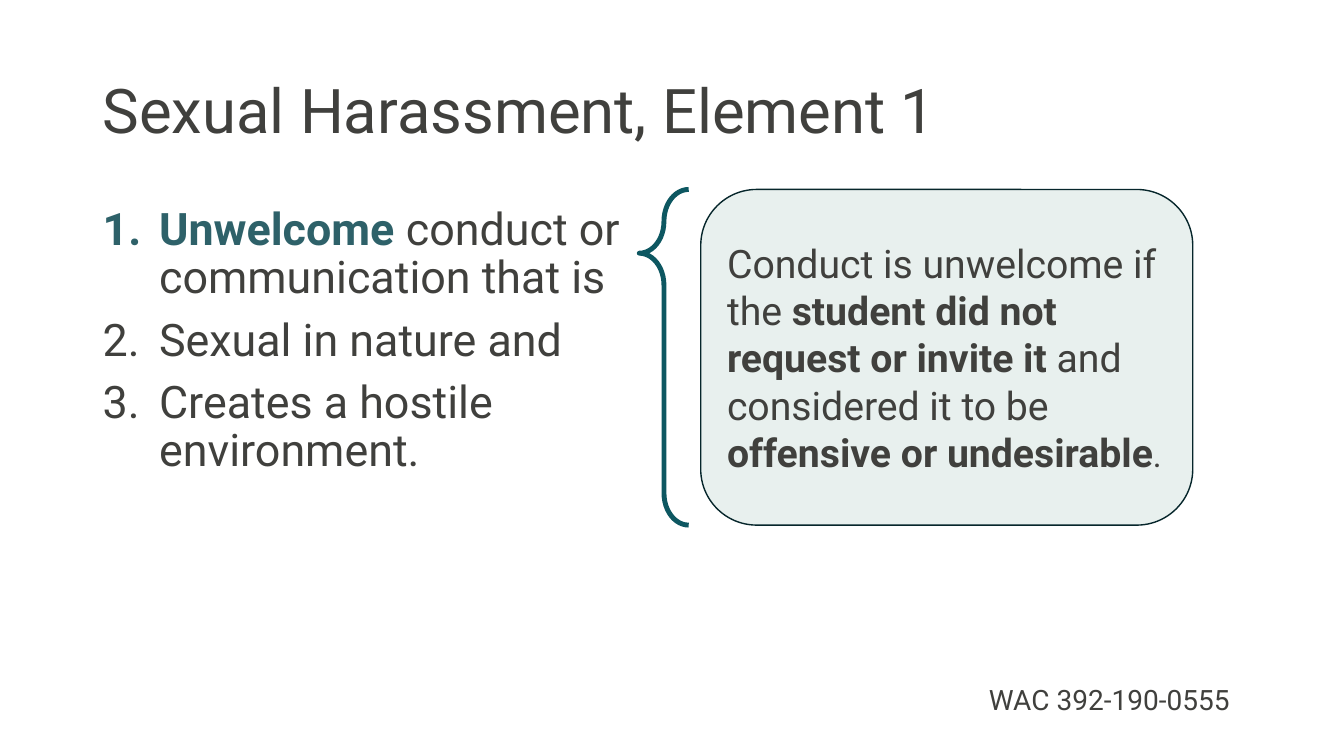
import pptx
import pptx.dml.color
import pptx.enum.shapes
import pptx.enum.text
import pptx.oxml.ns
import pptx.util
import lxml.etree

PX = 9144  # EMU per px, 100 px to the inch
RGBColor = pptx.dml.color.RGBColor
INK = RGBColor(0x40, 0x40, 0x3D)
TEAL = RGBColor(0x2E, 0x61, 0x69)
BRACE_TEAL = RGBColor(0x0D, 0x57, 0x61)
CARD_FILL = RGBColor(0xE8, 0xF0, 0xEE)
CARD_LINE = RGBColor(0x06, 0x26, 0x2B)
MIDDLE = pptx.enum.text.MSO_ANCHOR.MIDDLE
TOP = pptx.enum.text.MSO_ANCHOR.TOP
SHAPES = pptx.enum.shapes.MSO_SHAPE


def px(*lengths):
    return [length * PX for length in lengths]


def write(box, paragraphs, size, anchor=TOP, spacing=None, before=0, numbered=False):
    """Fill a box with paragraphs, each a list of (text, run format) pairs."""
    frame = box.text_frame
    frame.word_wrap = True
    frame.vertical_anchor = anchor
    for index, spans in enumerate(paragraphs):
        para = frame.add_paragraph() if index else frame.paragraphs[0]
        para.alignment = pptx.enum.text.PP_ALIGN.LEFT
        if spacing:
            para.line_spacing = spacing
        if index and before:
            para.space_before = pptx.util.Pt(before)
        if numbered:
            properties = para._p.get_or_add_pPr()
            properties.set("marL", str(56 * PX))
            properties.set("indent", str(-56 * PX))
            lxml.etree.SubElement(properties, pptx.oxml.ns.qn("a:buFont"), typeface="+mj-lt")
            lxml.etree.SubElement(properties, pptx.oxml.ns.qn("a:buAutoNum"), type="arabicPeriod")
        for text, style in spans:
            span = para.add_run()
            span.text = text
            span.font.name = "Roboto"
            span.font.size = pptx.util.Pt(style.get("size", size))
            span.font.bold = style.get("bold", False)
            span.font.color.rgb = style.get("color", INK)


deck = pptx.Presentation()
deck.slide_width, deck.slide_height = px(1333, 750)
page = deck.slides.add_slide(deck.slide_layouts[6])

title = page.shapes.add_textbox(*px(92, 40, 1150, 145))
write(title, [[("Sexual Harassment, Element 1", {})]], 44, anchor=MIDDLE, spacing=0.9)

elements = page.shapes.add_textbox(*px(92, 200, 567, 457))
write(elements, [
    [("Unwelcome", {"bold": True, "color": TEAL}), (" conduct or communication that is", {})],
    [("Sexual in nature and", {})],
    [("Creates a hostile environment.", {})],
], 32, spacing=0.9, before=10, numbered=True)

brace = page.shapes.add_shape(SHAPES.LEFT_BRACE, *px(634, 188, 49, 333))
brace.shadow.inherit = False
brace.adjustments[0] = 0.98
brace.adjustments[1] = 0.19
brace.fill.background()
brace.line.color.rgb = BRACE_TEAL
brace.line.width = pptx.util.Pt(3.5)

card = page.shapes.add_shape(SHAPES.ROUNDED_RECTANGLE, *px(695, 188, 488, 333))
card.shadow.inherit = False
card.fill.solid()
card.fill.fore_color.rgb = CARD_FILL
card.line.color.rgb = CARD_LINE
card.line.width = pptx.util.Pt(1)
write(card, [[
    ("Conduct is unwelcome if the ", {}),
    ("student did not request or invite it ", {"bold": True}),
    ("and considered it to be ", {}),
    ("offensive or undesirable", {"bold": True}),
    (".", {"size": 24}),
]], 28, anchor=MIDDLE)

citation = page.shapes.add_textbox(*px(971, 672, 271, 44))
write(citation, [[("WAC 392-190-0555", {})]], 20)

deck.save("out.pptx")
